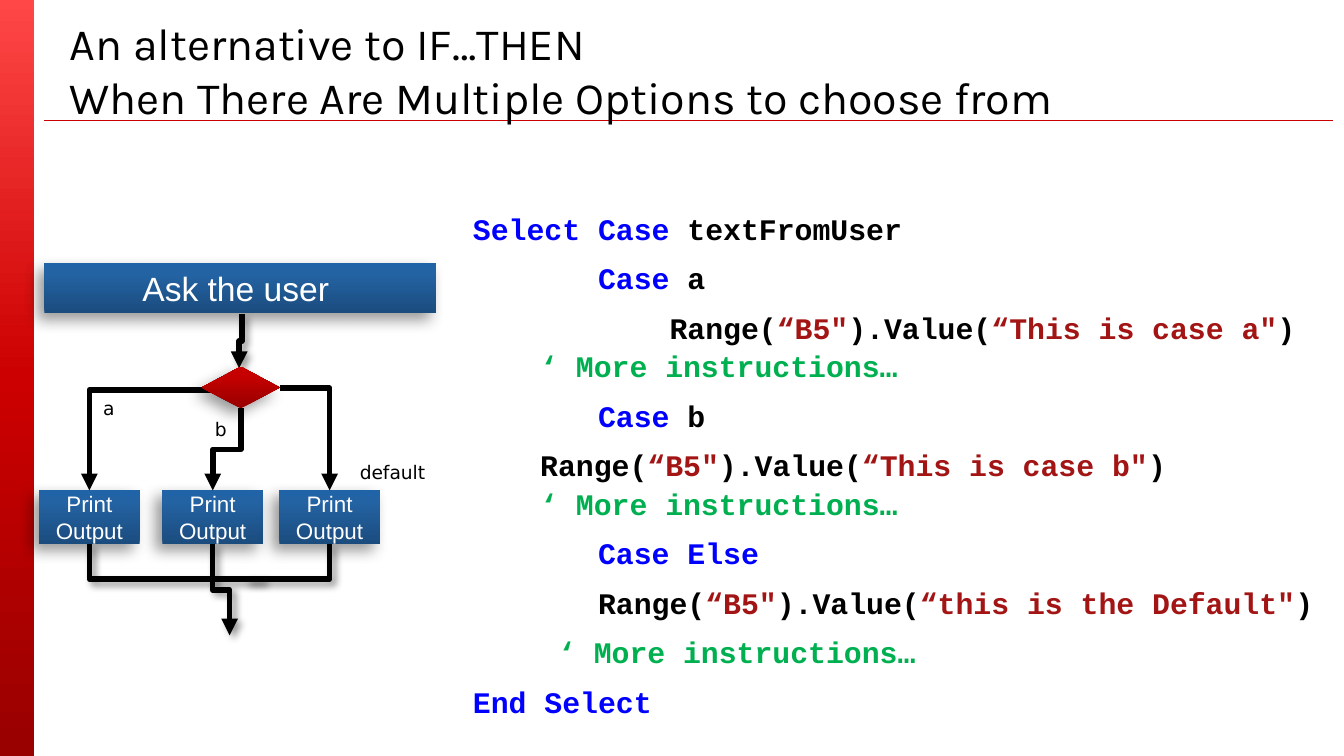
from copy import deepcopy
from dataclasses import dataclass

from lxml import etree
from pptx import Presentation
from pptx.dml.color import RGBColor
from pptx.enum.shapes import MSO_CONNECTOR, MSO_SHAPE
from pptx.enum.text import MSO_ANCHOR, PP_ALIGN
from pptx.oxml.ns import qn
from pptx.util import Cm, Pt

STRAIGHT, ELBOW = MSO_CONNECTOR.STRAIGHT, MSO_CONNECTOR.ELBOW
RECTANGLE = MSO_SHAPE.RECTANGLE
PROCESS, DECISION = MSO_SHAPE.FLOWCHART_PROCESS, MSO_SHAPE.FLOWCHART_DECISION
MIDDLE, CENTER = MSO_ANCHOR.MIDDLE, PP_ALIGN.CENTER


@dataclass(frozen=True)
class Theme:
    black: str = "000000"
    white: str = "FFFFFF"
    rule: str = "C80000"
    keyword: str = "0000FF"
    literal: str = "A31515"
    comment: str = "00B050"
    band: tuple = ((0, "FF4747"), (50, "CC0000"), (100, "990000"))
    blue: tuple = ((0, "1B4C7E"), (80, "2363A3"), (100, "2063A6"))
    red: tuple = ((0, "980000"), (80, "C60000"), (100, "C70000"))
    title_font: str = "Karla"
    code_font: str = "Courier New"
    box_font: str = "Arial"
    label_font: str = "DejaVu Sans"
    title_size: int = 24
    ask_size: int = 18
    code_size: int = 16
    print_size: int = 12
    label_size: int = 10
    box_shadow: tuple = (8, 5, 135)
    arrow_shadow: tuple = (4, 3, 45)


THEME = Theme()
CODE = [
    [("Select Case", THEME.keyword), (" textFromUser", THEME.black)],
    [("       Case", THEME.keyword), (" a", THEME.black)],
    [("           Range(", THEME.black), ("“B5\"", THEME.literal),
     (").Value(", THEME.black), ("“This is case a\"", THEME.literal),
     (")", THEME.black), None, ("\t‘ More instructions…", THEME.comment)],
    [("       Case", THEME.keyword), (" b", THEME.black)],
    [(" \tRange(", THEME.black), ("“B5\"", THEME.literal),
     (").Value(", THEME.black), ("“This is case b\"", THEME.literal),
     (")", THEME.black), None, ("\t‘ More instructions…", THEME.comment)],
    [("       Case Else", THEME.keyword)],
    [("       Range(", THEME.black), ("“B5\"", THEME.literal),
     (").Value(", THEME.black), ("“this is the Default\"", THEME.literal),
     (")", THEME.black)],
    [("\t ‘ More instructions…", THEME.comment)],
    [("End Select", THEME.keyword)],
]


def style_font(font, name, size, color, bold=False):
    font.name, font.size, font.bold = name, Pt(size), bold
    font.color.rgb = RGBColor.from_string(color)


def add_color(parent, color, opacity=100):
    node = etree.SubElement(parent, qn("a:srgbClr"), val=color)
    if opacity < 100:
        etree.SubElement(node, qn("a:alpha"), val=str(opacity * 1000))


def add_effects(properties, shadow):
    effects = properties.find(qn("a:effectLst"))
    if effects is None:
        effects = etree.SubElement(properties, qn("a:effectLst"))
    if shadow:
        blur, distance, angle = shadow
        outer = etree.SubElement(
            effects, qn("a:outerShdw"), blurRad=str(Pt(blur)), dist=str(Pt(distance)),
            dir=str(angle * 60000), algn="ctr", rotWithShape="0")
        add_color(outer, THEME.black, 40)


def add_block(slide, kind, box, stops, angle, shadow=None):
    block = slide.shapes.add_shape(kind, *map(Cm, box))
    block.fill.gradient()
    block.fill.gradient_angle = angle
    stop_list = block._element.spPr.find(".//" + qn("a:gsLst"))
    stop_list[:] = []
    for position, color in stops:
        add_color(etree.SubElement(stop_list, qn("a:gs"), pos=str(position * 1000)), color)
    block.line.fill.background()
    block.shadow.inherit = False
    add_effects(block._element.spPr, shadow)
    return block


def add_process(slide, box, text, size):
    process = add_block(slide, PROCESS, box, THEME.blue, 90, THEME.box_shadow)
    frame = process.text_frame
    frame.margin_left = frame.margin_right = frame.margin_top = frame.margin_bottom = Cm(0.13)
    frame.word_wrap, frame.vertical_anchor = True, MIDDLE
    frame.text = text
    frame.paragraphs[0].alignment = CENTER
    style_font(frame.paragraphs[0].runs[0].font, THEME.box_font, size, THEME.white)


def add_text(slide, box, text, font, size):
    frame = slide.shapes.add_textbox(*map(Cm, box)).text_frame
    frame.word_wrap = True
    frame.paragraphs[0].text = text
    for run in frame.paragraphs[0].runs:
        style_font(run.font, font, size, THEME.black)
    return frame


def add_line(slide, kind, start, end, color, width):
    line = slide.shapes.add_connector(kind, *map(Cm, (*start, *end)))
    line.line.color.rgb = RGBColor.from_string(color)
    line.line.width = Pt(width)
    return line


def add_elbow(slide, start, end, bends, vertical=False, arrow=True, shadow=None):
    if vertical:
        (x1, y1), (x2, y2) = start, end
        x, y, half_run, half_drop = (x1 + x2) / 2, (y1 + y2) / 2, (x2 - x1) / 2, (y2 - y1) / 2
        start, end = (x - half_drop, y + half_run), (x + half_drop, y - half_run)
    elbow = add_line(slide, ELBOW, start, end, THEME.black, 3)
    properties = elbow._element.spPr
    properties.find(qn("a:prstGeom")).set("prst", f"bentConnector{bends + 1}")
    if vertical:
        properties.find(qn("a:xfrm")).set("rot", str(90 * 60000))
    if arrow:
        etree.SubElement(properties.find(qn("a:ln")), qn("a:tailEnd"), type="triangle")
    add_effects(properties, shadow)


def build_header(slide, left, top, width, height):
    rule = add_line(slide, STRAIGHT, (left, top + 1.7), (left + width, top + 1.7), THEME.rule, 0.75)
    add_effects(rule._element.spPr, None)
    title = add_text(slide, (left + 0.23, top, width - 0.66, height),
                     "An alternative to IF…THEN\vWhen There Are Multiple Options to choose from",
                     THEME.title_font, THEME.title_size)
    title.vertical_anchor = MIDDLE


def build_code(slide, box):
    frame = slide.shapes.add_textbox(*map(Cm, box)).text_frame
    frame.word_wrap = True
    for index, pieces in enumerate(CODE):
        paragraph = frame.add_paragraph() if index else frame.paragraphs[0]
        paragraph.line_spacing = 1.07
        paragraph.space_before = Pt(6 if index else 0)
        for piece in pieces:
            if piece is None:
                paragraph.add_line_break()
                continue
            run = paragraph.add_run()
            run.text, color = piece
            style_font(run.font, THEME.code_font, THEME.code_size, color, True)
        for line_break in paragraph._p.findall(qn("a:br")):
            line_break.append(deepcopy(paragraph.runs[0]._r.rPr))


def build_flowchart(slide, left, top):
    def at(x, y):
        return left + x, top + y

    print_width, print_height, print_top = 1.9, 1.02, 4.29
    print_bottom = print_top + print_height
    print_lefts = (0, 2.33, 4.54)
    first, second, third = (x + print_width / 2 for x in print_lefts)
    shadow = THEME.arrow_shadow

    add_process(slide, (*at(0.1, 0), 7.41, 0.94), "Ask the user ", THEME.ask_size)
    add_elbow(slide, at(3.83, 0.96), at(3.78, 1.98), 2, vertical=True, shadow=shadow)
    add_elbow(slide, at(second, print_bottom), at(3.6, 7.03), 2, vertical=True, shadow=shadow)
    for x in print_lefts:
        add_process(slide, (*at(x, print_top), print_width, print_height),
                    "Print Output", THEME.print_size)
    for center, join in ((first, 4.24), (third, 3.91)):
        add_elbow(slide, at(center, print_bottom), at(join, 5.97), 1,
                  vertical=True, arrow=False, shadow=shadow)
    add_elbow(slide, at(3.37, 2.39), at(first, print_top), 1)
    add_elbow(slide, at(3.81, 2.74), at(second, print_top), 2, vertical=True)
    add_elbow(slide, at(4.55, 2.36), at(third, print_top), 1)
    for label, x, y, width in (("a", 0.96, 2.39, 0.84), ("b", 3.07, 2.79, 0.84),
                               ("default", 5.81, 3.61, 1.9)):
        add_text(slide, (*at(x, y), width, 0.69), label, THEME.label_font, THEME.label_size)
    add_block(slide, DECISION, (*at(3.07, 1.95), 1.48, 0.79), THEME.red, 90, THEME.box_shadow)


def main():
    deck = Presentation()
    deck.slide_width, deck.slide_height = Cm(25.4), Cm(14.29)
    slide = deck.slides.add_slide(deck.slide_layouts[6])
    add_block(slide, RECTANGLE, (0, 0, 0.64, 14.29), THEME.band, 270)
    build_header(slide, 0.84, 0.58, 24.36, 1.47)
    build_code(slide, (8.69, 3.81, 16.51, 9.53))
    build_flowchart(slide, 0.74, 4.98)
    deck.save("out.pptx")


if __name__ == "__main__":
    main()
